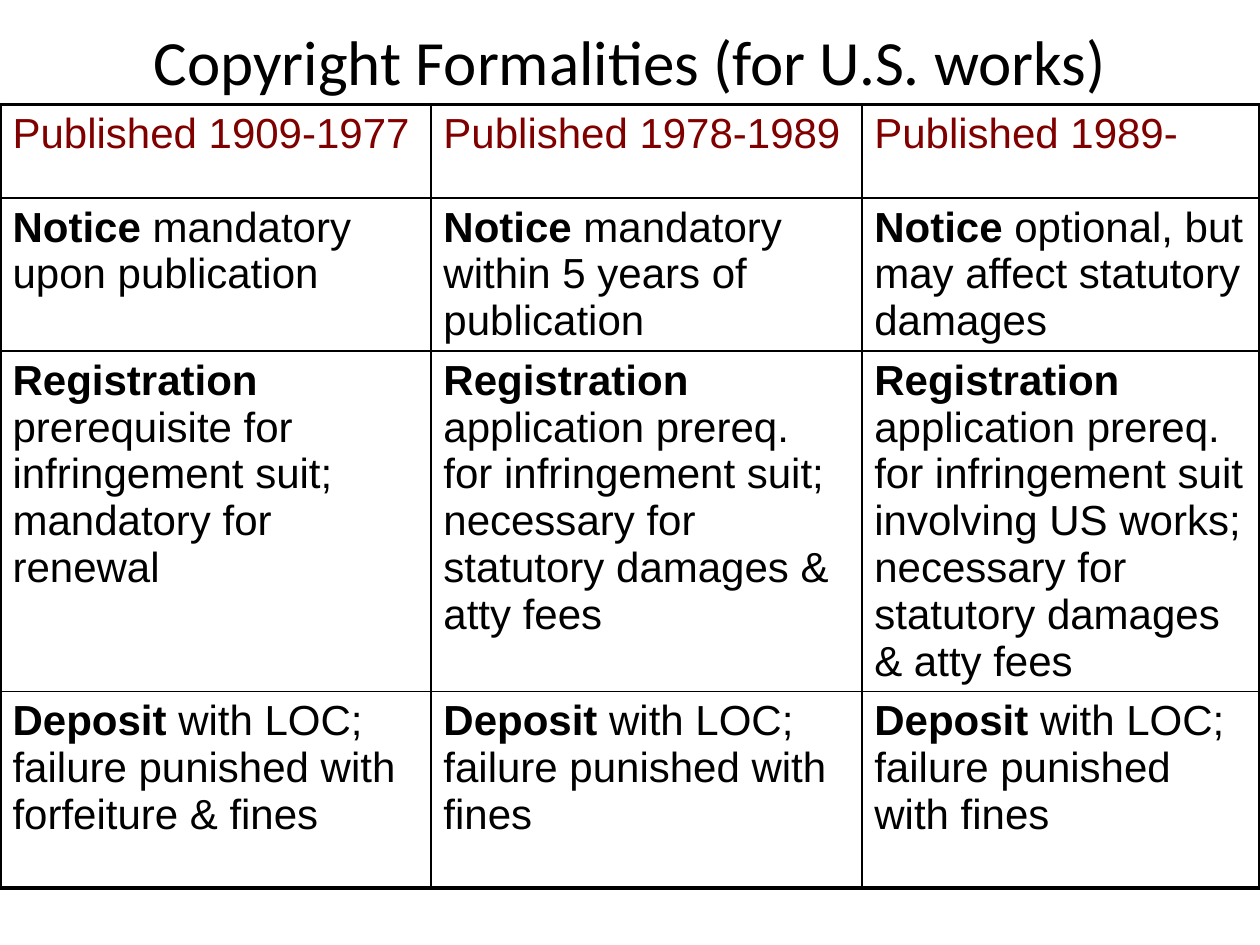
from dataclasses import dataclass

from lxml import etree
from pptx import Presentation
from pptx.dml.color import RGBColor
from pptx.enum.text import MSO_ANCHOR, PP_ALIGN
from pptx.oxml.ns import qn
from pptx.table import _Cell
from pptx.util import Inches, Pt

CENTER = PP_ALIGN.CENTER
MIDDLE = MSO_ANCHOR.MIDDLE

BLACK = RGBColor(0x00, 0x00, 0x00)
MAROON = RGBColor(0x80, 0x00, 0x00)

TITLE_ONLY_LAYOUT = 5
OUTER_BORDER = Pt(2.25)
INNER_BORDER = Pt(1)
COLUMN_WIDTHS = (3.42, 3.42, 3.16)
ROW_HEIGHTS = (0.74, 1.02, 1.81, 1.56)


@dataclass
class Formality:
    name: str
    rules: tuple[str, ...]


PERIODS = ("Published 1909-1977", "Published 1978-1989", "Published 1989-")
FORMALITIES = (
    Formality("Notice", (
        "mandatory upon publication",
        "mandatory within 5 years of publication",
        "optional, but may affect statutory damages",
    )),
    Formality("Registration", (
        "prerequisite for infringement suit; mandatory for renewal",
        "application prereq. for infringement suit; necessary for "
        "statutory damages & atty fees",
        "application prereq. for infringement suit involving US works; "
        "necessary for statutory damages & atty fees",
    )),
    Formality("Deposit", (
        "with LOC; failure punished with forfeiture & fines",
        "with LOC; failure punished with fines",
        "with LOC; failure punished with fines",
    )),
)


def set_borders(cell: _Cell, row: int, column: int) -> None:
    """Draw thick lines on the table's outside edges and thin ones within."""
    outside = {
        "L": column == 0,
        "R": column == len(COLUMN_WIDTHS) - 1,
        "T": row == 0,
        "B": row == len(ROW_HEIGHTS) - 1,
    }
    properties = cell._tc.get_or_add_tcPr()
    for side, is_outside in outside.items():
        width = OUTER_BORDER if is_outside else INNER_BORDER
        line = etree.SubElement(properties, qn(f"a:ln{side}"), w=str(int(width)))
        fill = etree.SubElement(line, qn("a:solidFill"))
        etree.SubElement(fill, qn("a:srgbClr"), val=str(BLACK))


def fill_cell(cell: _Cell, color: RGBColor, text: str, heading: str = "") -> None:
    """Write an optional bold heading followed by plain text."""
    paragraph = cell.text_frame.paragraphs[0]
    paragraph.font.name = "Arial"
    paragraph.font.size = Pt(24)
    paragraph.font.color.rgb = color
    if heading:
        heading_run = paragraph.add_run()
        heading_run.text = heading
        heading_run.font.bold = True
        text = f" {text}"
    text_run = paragraph.add_run()
    text_run.text = text
    text_run.font.bold = False


def main() -> None:
    presentation = Presentation()
    presentation.slide_width = Inches(10)
    presentation.slide_height = Inches(7.5)
    slide = presentation.slides.add_slide(
        presentation.slide_layouts[TITLE_ONLY_LAYOUT])

    # Title
    title = slide.shapes.title
    title.left, title.top = Inches(0), Inches(0)
    title.width, title.height = Inches(10), Inches(0.95)
    title.text_frame.text = "Copyright Formalities (for U.S. works)"
    title.text_frame.vertical_anchor = MIDDLE
    paragraph = title.text_frame.paragraphs[0]
    paragraph.alignment = CENTER
    paragraph.font.name = "Calibri"
    paragraph.font.size = Pt(36)
    paragraph.font.color.rgb = BLACK

    # Table grid
    table = slide.shapes.add_table(
        len(ROW_HEIGHTS), len(COLUMN_WIDTHS), Inches(0), Inches(0.83),
        Inches(sum(COLUMN_WIDTHS)), Inches(sum(ROW_HEIGHTS))).table
    table.first_row = False
    table.horz_banding = False
    for column, width in zip(table.columns, COLUMN_WIDTHS):
        column.width = Inches(width)
    for row, height in zip(table.rows, ROW_HEIGHTS):
        row.height = Inches(height)
    for row_index, row in enumerate(table.rows):
        for column_index, cell in enumerate(row.cells):
            set_borders(cell, row_index, column_index)
            cell.fill.background()

    # Table text
    for column_index, period in enumerate(PERIODS):
        fill_cell(table.cell(0, column_index), MAROON, period)
    for row_index, formality in enumerate(FORMALITIES, start=1):
        for column_index, rule in enumerate(formality.rules):
            fill_cell(table.cell(row_index, column_index), BLACK, rule,
                      formality.name)

    presentation.save("out.pptx")


if __name__ == "__main__":
    main()
